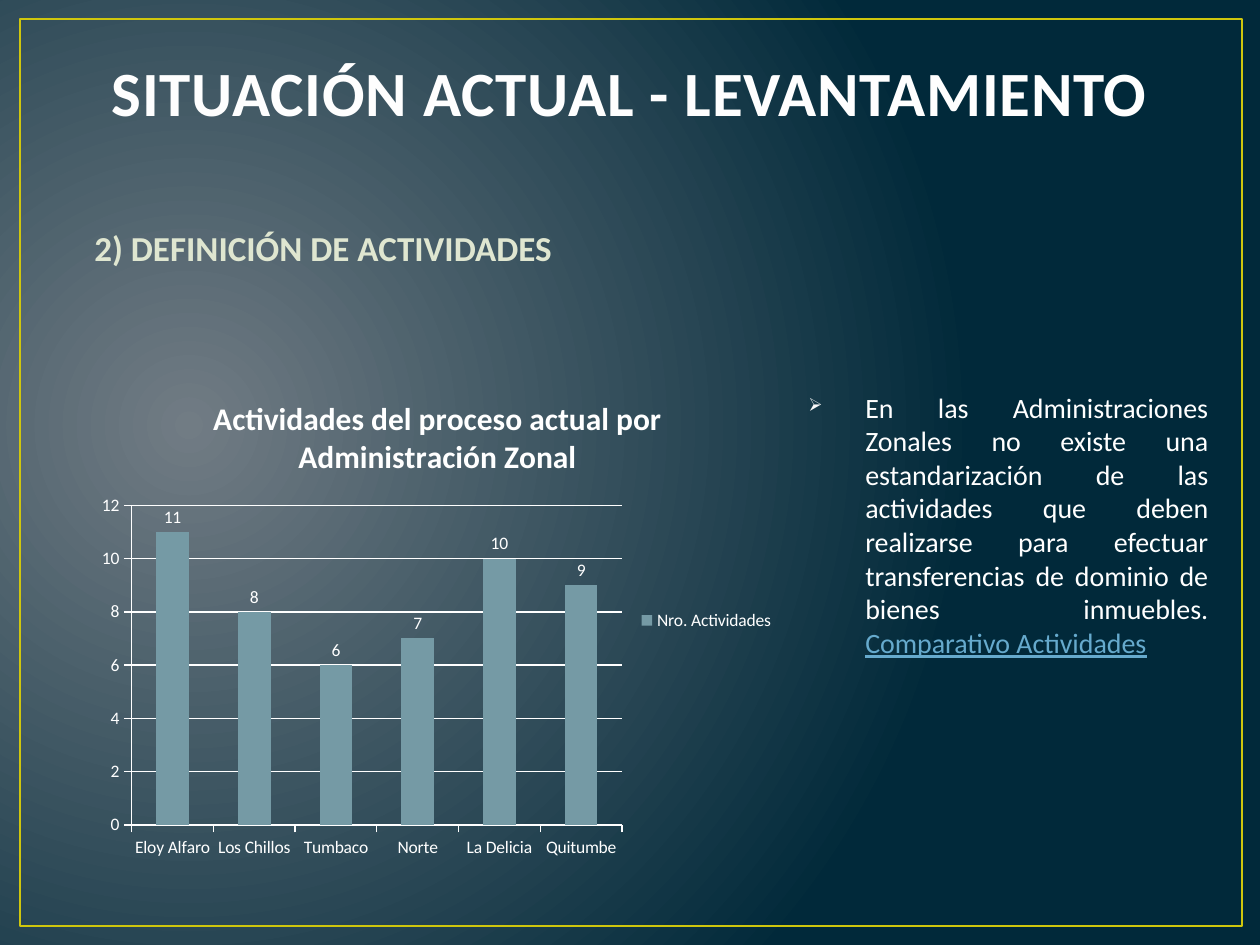
from lxml import etree
from pptx import Presentation
from pptx import util as u
from pptx.chart.data import CategoryChartData
from pptx.dml.color import RGBColor
from pptx.enum import chart as charts, shapes, text
from pptx.oxml.ns import qn

PX = 914400 // 126
FONT = "Calibri"
COLORS = {
    "center": "717C84",
    "edge": "01293A",
    "frame": "CFC60D",
    "title": "FEFEFE",
    "subtitle": "DFE6D0",
    "bullet": "F9F9F9",
    "white": "FFFFFF",
    "link": "66AACD",
    "bar": "759AA5",
}
ACTIVITIES = {
    "Eloy Alfaro": 11,
    "Los Chillos": 8,
    "Tumbaco": 6,
    "Norte": 7,
    "La Delicia": 10,
    "Quitumbe": 9,
}


def rgb(name):
    return RGBColor.from_string(COLORS[name])


def box(left, top, width, height):
    return [u.Emu(value * PX) for value in (left, top, width, height)]


def style_font(font, size, color, bold=False):
    font.name = FONT
    font.size = u.Pt(size)
    font.bold = bold
    font.color.rgb = rgb(color)


def set_background(slide):
    fill = slide.background.fill
    fill.gradient()
    for stop, (position, color) in zip(fill.gradient_stops, ((0, "center"), (1, "edge"))):
        stop.position = position
        stop.color.rgb = rgb(color)
    gradient = slide.background._cSld.find(".//" + qn("a:gradFill"))
    gradient.remove(gradient.find(qn("a:lin")))
    circle = etree.SubElement(gradient, qn("a:path"), path="circle")
    etree.SubElement(circle, qn("a:fillToRect"), l="15000", t="50000", r="85000", b="60000")


def add_frame(slide):
    frame = slide.shapes.add_shape(shapes.MSO_SHAPE.RECTANGLE, *box(20, 19, 1222, 907))
    frame.shadow.inherit = False
    frame.fill.background()
    frame.line.color.rgb = rgb("frame")
    frame.line.width = u.Pt(1.5)


def add_text(slide, place, content, size, color, bold=False):
    text_frame = slide.shapes.add_textbox(*box(*place)).text_frame
    text_frame.word_wrap = True
    text_frame.text = content
    paragraph = text_frame.paragraphs[0]
    style_font(paragraph.runs[0].font, size, color, bold)
    return text_frame, paragraph


def set_indent(paragraph, margin, indent=0):
    properties = paragraph._p.get_or_add_pPr()
    properties.set("marL", str(margin * PX))
    properties.set("indent", str(indent * PX))
    return properties


def add_bullet(properties, character, color, percent):
    bullet_color = etree.SubElement(properties, qn("a:buClr"))
    etree.SubElement(bullet_color, qn("a:srgbClr"), val=COLORS[color])
    etree.SubElement(properties, qn("a:buSzPct"), val=str(percent * 1000))
    etree.SubElement(properties, qn("a:buChar"), char=character)


def add_title(slide):
    text_frame, paragraph = add_text(
        slide, (63, 38, 1134, 97), "SITUACIÓN ACTUAL - LEVANTAMIENTO", 36, "title", True)
    text_frame.vertical_anchor = text.MSO_ANCHOR.BOTTOM
    paragraph.alignment = text.PP_ALIGN.CENTER
    paragraph.runs[0].font._element.set("spc", "50")


def add_subtitle(slide):
    _, paragraph = add_text(
        slide, (63, 220, 1134, 624), "2) DEFINICIÓN DE ACTIVIDADES", 20, "subtitle", True)
    set_indent(paragraph, 19)


def add_finding(slide):
    _, paragraph = add_text(
        slide, (777, 384, 444, 422),
        "En las Administraciones Zonales no existe una estandarización de las actividades "
        "que deben realizarse para efectuar transferencias de dominio de bienes inmuebles. ",
        16, "white")
    paragraph.alignment = text.PP_ALIGN.JUSTIFY
    add_bullet(set_indent(paragraph, 76, -57), "➢", "bullet", 65)
    link = paragraph.add_run()
    link.text = "Comparativo Actividades"
    style_font(link.font, 16, "link")
    link.font.underline = True


def style_axis(axis):
    axis.major_tick_mark = charts.XL_TICK_MARK.OUTSIDE
    axis.minor_tick_mark = charts.XL_TICK_MARK.NONE
    axis.format.line.color.rgb = rgb("white")
    axis.format.line.width = u.Pt(0.75)


def add_activity_chart(slide):
    data = CategoryChartData()
    data.categories = list(ACTIVITIES)
    data.add_series("Nro. Actividades", list(ACTIVITIES.values()))
    chart = slide.shapes.add_chart(
        charts.XL_CHART_TYPE.COLUMN_CLUSTERED, *box(88, 374, 699, 493), data).chart
    style_font(chart.font, 10, "white")

    title = chart.chart_title.text_frame
    title.text = "Actividades del proceso actual por Administración Zonal"
    style_font(title.paragraphs[0].runs[0].font, 18, "white", True)

    chart.has_legend = True
    chart.legend.position = charts.XL_LEGEND_POSITION.RIGHT
    chart.legend.include_in_layout = False

    style_axis(chart.category_axis)
    value_axis = chart.value_axis
    style_axis(value_axis)
    value_axis.minimum_scale, value_axis.maximum_scale, value_axis.major_unit = 0, 12, 2
    grid_line = value_axis.major_gridlines.format.line
    grid_line.color.rgb = rgb("white")
    grid_line.width = u.Pt(0.75)

    plot = chart.plots[0]
    plot.gap_width = 150
    plot.vary_by_categories = False
    plot.has_data_labels = True
    plot.data_labels.show_value = True
    plot.data_labels.position = charts.XL_LABEL_POSITION.OUTSIDE_END
    style_font(plot.data_labels.font, 10, "white")
    fill = plot.series[0].format.fill
    fill.solid()
    fill.fore_color.rgb = rgb("bar")


def main():
    presentation = Presentation()
    presentation.slide_width = u.Inches(10)
    presentation.slide_height = u.Inches(7.5)
    slide = presentation.slides.add_slide(presentation.slide_layouts[6])
    set_background(slide)
    add_frame(slide)
    add_subtitle(slide)
    add_activity_chart(slide)
    add_finding(slide)
    add_title(slide)
    presentation.save("out.pptx")


if __name__ == "__main__":
    main()
